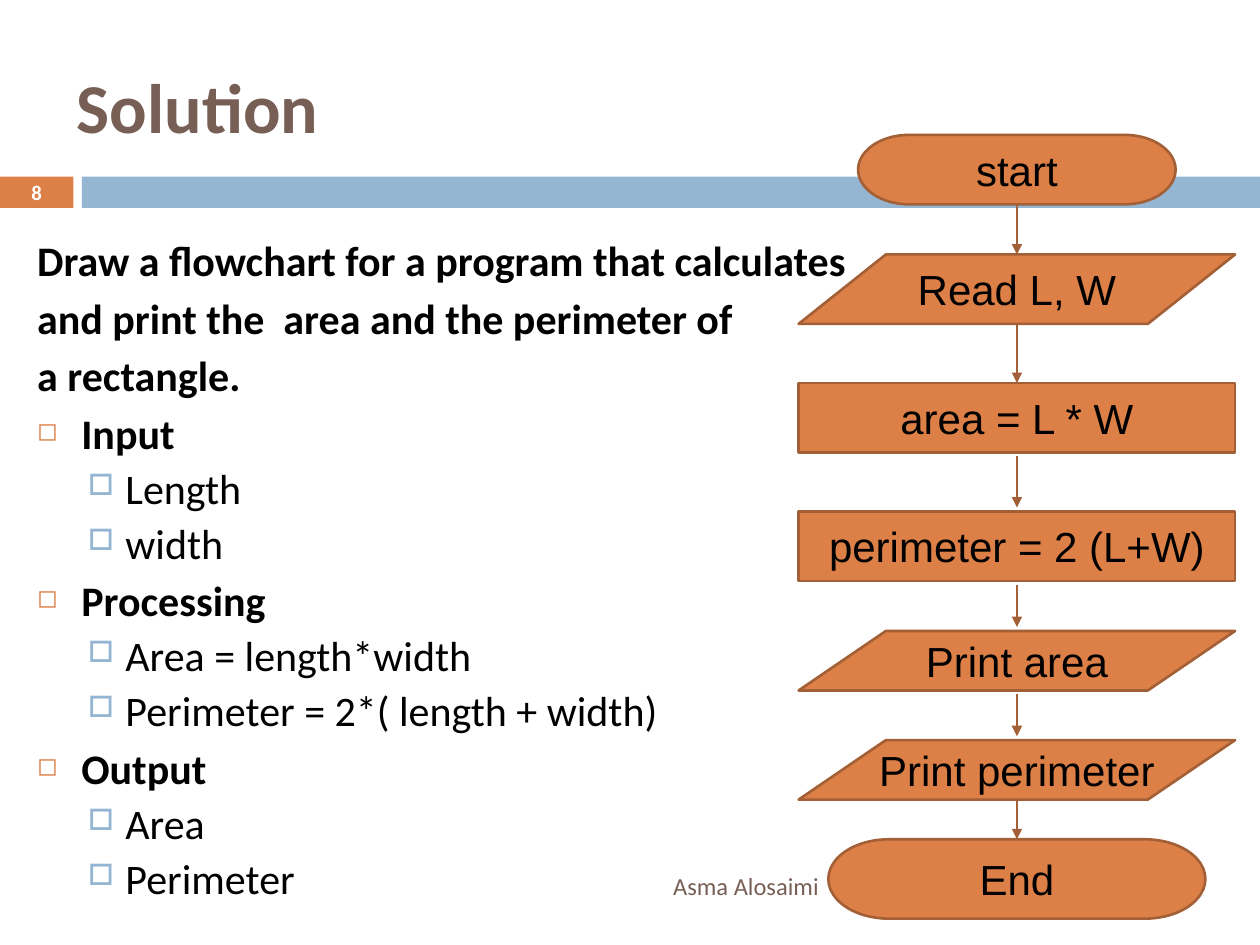
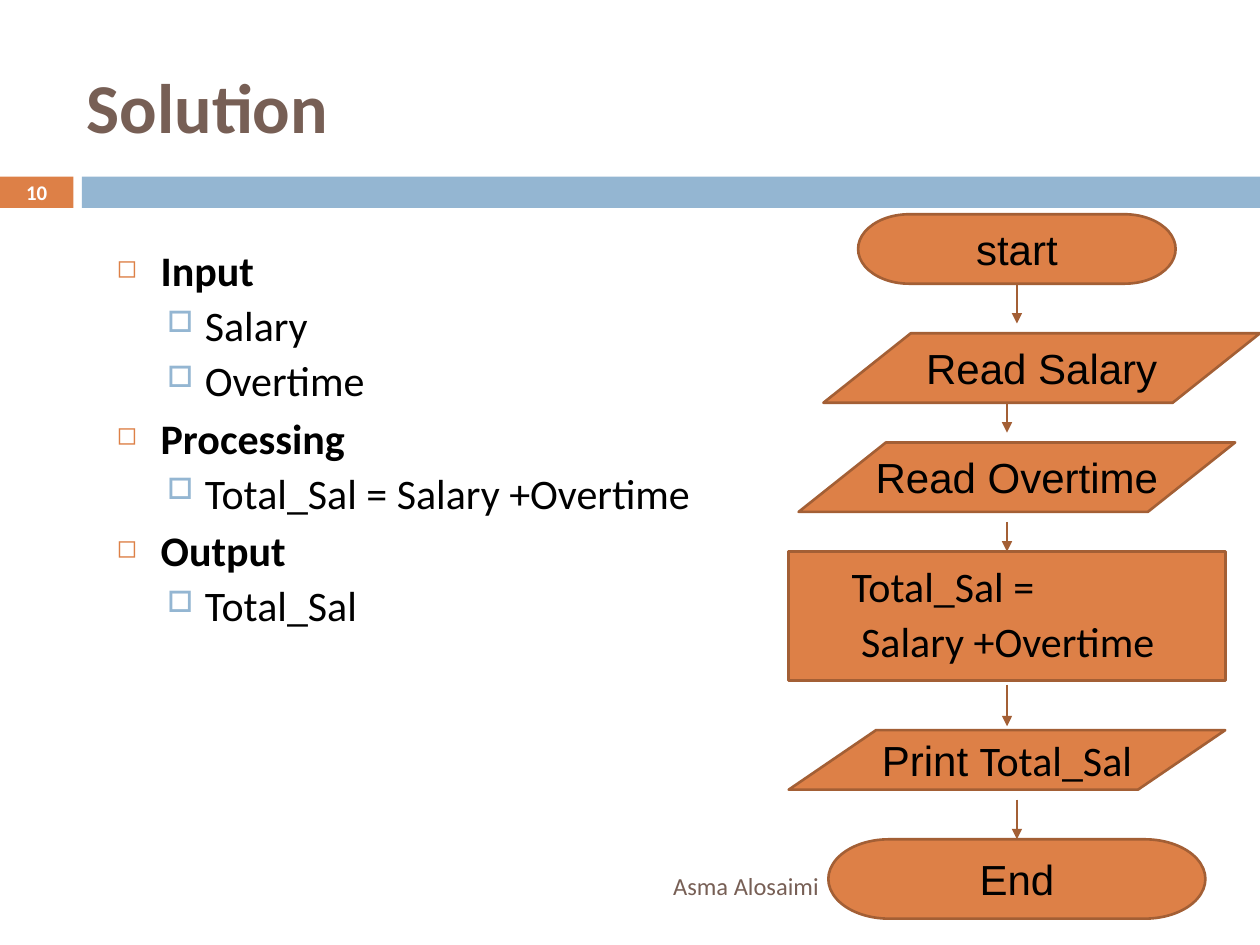
"""Build two flowchart solution slides."""
from dataclasses import dataclass

from lxml.etree import SubElement
from pptx import Presentation
from pptx.dml.color import RGBColor
from pptx.enum.shapes import MSO_CONNECTOR, MSO_SHAPE
from pptx.enum.text import MSO_ANCHOR, PP_ALIGN
from pptx.oxml.ns import qn
from pptx.util import Cm, Pt


@dataclass(frozen=True)
class Theme:
    """Colours, fonts and type sizes."""
    orange: str = "DD8047"
    blue: str = "94B6D2"
    outline: str = "A35F35"
    brown: str = "775F55"
    black: str = "000000"
    white: str = "FFFFFF"
    text_font: str = "Calibri"
    flow_font: str = "Arial"
    title_size: float = 40
    body_size: float = 24
    footer_size: float = 14
    number_size: float = 11.9
    line_width: float = 1.5


@dataclass(frozen=True)
class Level:
    """Indents, spacing and bullet of an outline level."""
    depth: int
    margin: float
    hanging: float
    space_before: float
    bullet: str = ""
    bullet_color: str = ""
    bullet_percent: int = 100


@dataclass(frozen=True)
class Step:
    """A flowchart box and the arrow that leaves it."""
    kind: str
    runs: tuple
    top: float
    center: float = 20.5
    arrow_center: float = 20.5
    gap_above: float = 0
    gap_below: float = 0


THEME = Theme()
LEVELS = {
    "plain": Level(0, 0.89, 0.89, 7),
    "item": Level(0, 0.89, 0.89, 7, "◻", THEME.orange, 60),
    "detail": Level(1, 1.78, 0.76, 5.5, "□", THEME.blue, 70),
    "formula": Level(1, 1.78, 0.76, 5.5),
}
BOXES = {
    "start": (MSO_SHAPE.FLOWCHART_TERMINATOR, 6.4, 1.4),
    "end": (MSO_SHAPE.FLOWCHART_TERMINATOR, 7.6, 1.6),
    "read": (MSO_SHAPE.FLOWCHART_DATA, 8.8, 1.4),
    "print": (MSO_SHAPE.FLOWCHART_DATA, 8.8, 1.2),
    "process": (MSO_SHAPE.FLOWCHART_PROCESS, 8.8, 1.4),
    "formula": (MSO_SHAPE.FLOWCHART_PROCESS, 8.8, 2.6),
}


def write(paragraph, text, *, size, color=THEME.black, font=THEME.text_font,
          bold=False, align=None):
    """Append formatted text to a paragraph."""
    run = paragraph.add_run()
    run.text = text
    run.font.name = font
    run.font.size = Pt(size)
    run.font.bold = bold
    run.font.color.rgb = RGBColor.from_string(color)
    if align is not None:
        paragraph.alignment = align


class SlideBuilder:
    """Holds the theme and the current slide."""

    def __init__(self, presentation, theme):
        self.presentation = presentation
        self.theme = theme
        self.slide = None

    def start_slide(self, number, title_left):
        """Add a slide with its bands, footer, number and title."""
        theme = self.theme
        self.slide = self.presentation.slides.add_slide(
            self.presentation.slide_layouts[6])
        self.shape(MSO_SHAPE.RECTANGLE, 0, 3.56, 1.48, 0.63, theme.orange)
        self.shape(MSO_SHAPE.RECTANGLE, 1.65, 3.56, 23.75, 0.63, theme.blue)
        self.label("Asma Alosaimi", 1.7, 17.35, 15.06, 1.02, size=theme.footer_size,
                   color=theme.brown, align=PP_ALIGN.RIGHT)
        self.label(str(number), 0, 3.53, 1.48, 0.69, size=theme.number_size,
                   color=theme.white, bold=True, align=PP_ALIGN.CENTER)
        self.label("Solution", title_left, 0.53, 23, 3.2, size=theme.title_size,
                   color=theme.brown, bold=True)

    def shape(self, kind, left, top, width, height, fill, outline=None):
        """Add a preset shape."""
        shape = self.slide.shapes.add_shape(
            kind, Cm(left), Cm(top), Cm(width), Cm(height))
        shape.shadow.inherit = False
        shape.fill.solid()
        shape.fill.fore_color.rgb = RGBColor.from_string(fill)
        if outline:
            shape.line.color.rgb = RGBColor.from_string(outline)
            shape.line.width = Pt(self.theme.line_width)
        else:
            shape.line.fill.background()
        return shape

    def text_frame(self, left, top, width, height, anchor):
        """Add a wrapping text box and return its frame."""
        frame = self.slide.shapes.add_textbox(
            Cm(left), Cm(top), Cm(width), Cm(height)).text_frame
        frame.word_wrap = True
        frame.vertical_anchor = anchor
        return frame

    def label(self, text, left, top, width, height, **style):
        """Add one line of text, centred vertically."""
        frame = self.text_frame(left, top, width, height, MSO_ANCHOR.MIDDLE)
        write(frame.paragraphs[0], text, **style)

    def outline(self, frame, lines):
        """Fill a text frame with outline paragraphs."""
        for index, (name, text) in enumerate(lines):
            level = LEVELS[name]
            paragraph = frame.add_paragraph() if index else frame.paragraphs[0]
            paragraph.level = level.depth
            paragraph.alignment = PP_ALIGN.LEFT
            paragraph.line_spacing = 0.9
            paragraph.space_before = Pt(level.space_before if index else 0)
            properties = paragraph._p.get_or_add_pPr()
            properties.set("marL", str(Cm(level.margin)))
            properties.set("indent", str(-Cm(level.hanging)))
            if level.bullet:
                color = SubElement(properties, qn("a:buClr"))
                SubElement(color, qn("a:srgbClr"), val=level.bullet_color)
                SubElement(properties, qn("a:buSzPct"),
                           val=str(level.bullet_percent * 1000))
                SubElement(properties, qn("a:buChar"), char=level.bullet)
            write(paragraph, text, size=self.theme.body_size,
                  bold=level.depth == 0)

    def body(self, left, top, width, height, lines):
        """Add the outline text box."""
        self.outline(self.text_frame(left, top, width, height, MSO_ANCHOR.TOP), lines)

    def arrow(self, center, top, bottom):
        """Add a downward arrow."""
        connector = self.slide.shapes.add_connector(
            MSO_CONNECTOR.STRAIGHT, Cm(center), Cm(top), Cm(center), Cm(bottom))
        connector.line.color.rgb = RGBColor.from_string(self.theme.outline)
        connector.line.width = Pt(self.theme.line_width)
        SubElement(connector.line._get_or_add_ln(), qn("a:tailEnd"), type="triangle")
        SubElement(connector._element.spPr, qn("a:effectLst"))

    def box(self, step):
        """Add one flowchart box."""
        theme = self.theme
        kind, width, height = BOXES[step.kind]
        shape = self.shape(kind, step.center - width / 2, step.top, width, height,
                           theme.orange, theme.outline)
        frame = shape.text_frame
        frame.vertical_anchor = MSO_ANCHOR.MIDDLE
        if step.kind == "formula":
            frame.word_wrap = True
            self.outline(frame, [("formula", text) for text in step.runs])
            return
        frame.word_wrap = False
        fonts = (theme.flow_font, theme.text_font)
        for text, font in zip(step.runs, fonts):
            write(frame.paragraphs[0], text, size=theme.body_size, font=font,
                  align=PP_ALIGN.CENTER)

    def flowchart(self, steps):
        """Add the boxes and the arrows between them."""
        for step in steps:
            self.box(step)
        for step, following in zip(steps, steps[1:]):
            bottom = step.top + BOXES[step.kind][2]
            self.arrow(step.arrow_center, bottom + step.gap_above,
                       following.top - step.gap_below)


RECTANGLE_LINES = [
    ("plain", "Draw a flowchart for a program that calculates"),
    ("plain", "and print the  area and the perimeter of"),
    ("plain", "a rectangle."),
    ("item", "Input"),
    ("detail", "Length"),
    ("detail", "width"),
    ("item", "Processing"),
    ("detail", "Area = length*width"),
    ("detail", "Perimeter = 2*( length + width)"),
    ("item", "Output"),
    ("detail", "Area"),
    ("detail", "Perimeter"),
]
RECTANGLE_STEPS = [
    Step("start", ("start",), 2.72),
    Step("read", ("Read L, W",), 5.13),
    Step("process", ("area = L * W",), 7.72, gap_above=0.08, gap_below=0.08),
    Step("process", ("perimeter = 2 (L+W)",), 10.31, gap_above=0.08, gap_below=0.08),
    Step("print", ("Print area",), 12.72, gap_above=0.08, gap_below=0.08),
    Step("print", ("Print perimeter",), 14.92),
    Step("end", ("End",), 16.92),
]
SALARY_LINES = [
    ("item", "Input"),
    ("detail", "Salary"),
    ("detail", "Overtime"),
    ("item", "Processing"),
    ("detail", "Total_Sal = Salary +Overtime"),
    ("item", "Output"),
    ("detail", "Total_Sal"),
]
SALARY_STEPS = [
    Step("start", ("start",), 4.32, gap_below=0.2),
    Step("read", ("Read Salary",), 6.72, center=21, arrow_center=20.3, gap_below=0.2),
    Step("read", ("Read Overtime",), 8.92, arrow_center=20.3, gap_above=0.2),
    Step("formula", ("Total_Sal =", " Salary +Overtime"), 11.12, center=20.3,
         arrow_center=20.3, gap_above=0.08, gap_below=0.08),
    Step("print", ("Print ", "Total_Sal"), 14.72, center=20.3, gap_above=0.2),
    Step("end", ("End",), 16.92),
]


def main():
    """Build and save the presentation."""
    presentation = Presentation()
    presentation.slide_width = Cm(25.4)
    presentation.slide_height = Cm(19.05)
    builder = SlideBuilder(presentation, THEME)

    builder.start_slide(8, title_left=1.3)
    builder.body(0.5, 4.72, 21.6, 14.33, RECTANGLE_LINES)
    builder.flowchart(RECTANGLE_STEPS)

    builder.start_slide(10, title_left=1.5)
    builder.body(2.1, 4.92, 22.65, 12.5, SALARY_LINES)
    builder.flowchart(SALARY_STEPS)

    presentation.save("out.pptx")


if __name__ == "__main__":
    main()
